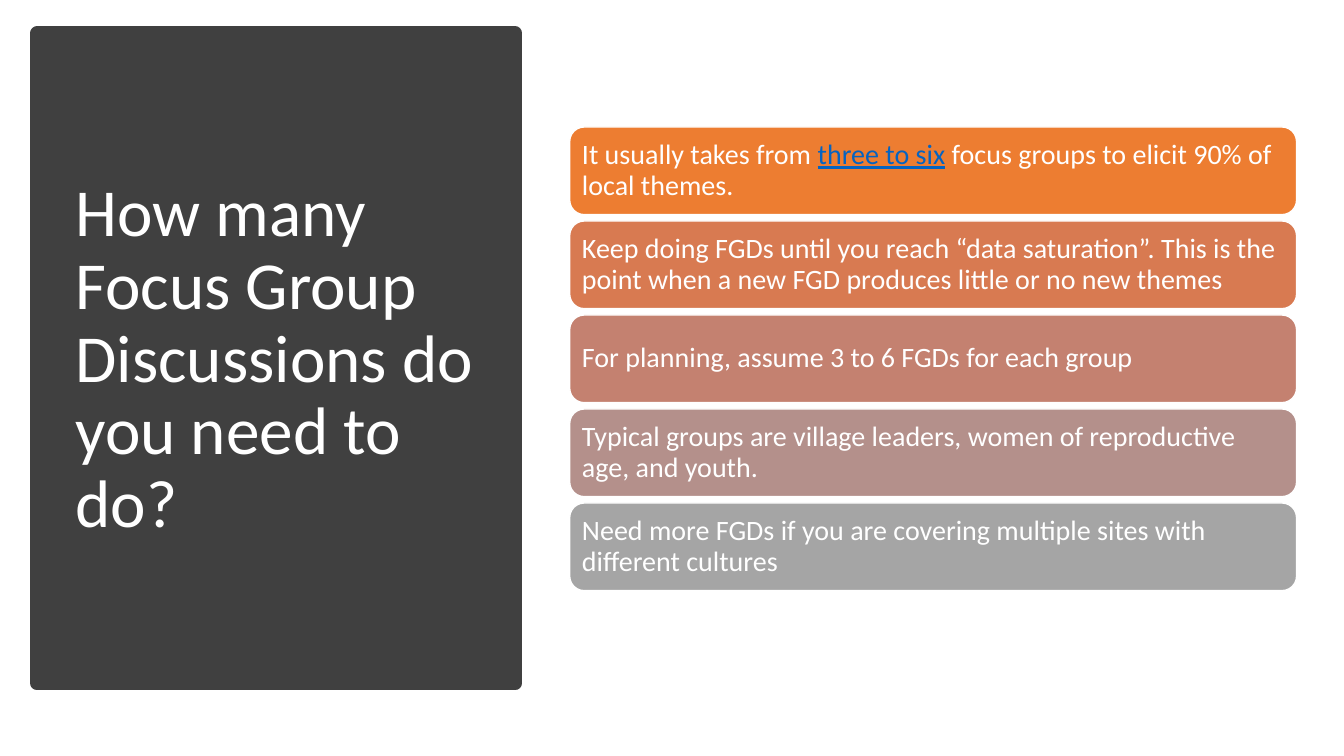
from pptx import Presentation
from pptx.dml.color import RGBColor
from pptx.enum.shapes import MSO_SHAPE as Shape
from pptx.enum.text import MSO_ANCHOR as Anchor, PP_ALIGN as Align
from pptx.util import Inches, Pt

FONT = "Calibri"
WHITE = RGBColor(0xFF, 0xFF, 0xFF)
CHARCOAL = RGBColor(0x40, 0x40, 0x40)
LINK_BLUE = RGBColor(0x05, 0x63, 0xC1)
BAR_COLORS = [
    RGBColor(0xED, 0x7D, 0x31),
    RGBColor(0xD8, 0x7A, 0x51),
    RGBColor(0xC4, 0x81, 0x70),
    RGBColor(0xB4, 0x90, 0x8B),
    RGBColor(0xA5, 0xA5, 0xA5),
]

QUESTION = "How many Focus Group Discussions do you need to do?"
LINKED_WORDS = "three to six"
ANSWERS = [
    "It usually takes from three to six focus groups to elicit 90% of local themes.",
    "Keep doing FGDs until you reach “data saturation”. This is the point "
    "when a new FGD produces little or no new themes",
    "For planning, assume 3 to 6 FGDs for each group",
    "Typical groups are village leaders, women of reproductive age, and youth.",
    "Need more FGDs if you are covering multiple sites with different cultures",
]

# Column of answer bars, in inches
BAR_LEFT, BAR_TOP = 5.65, 1.26
BAR_WIDTH, BAR_HEIGHT, BAR_GAP = 7.21, 0.87, 0.0625
BAR_INSET = 0.08


def add_block(slide, kind, box, fill, line, line_width):
    block = slide.shapes.add_shape(kind, *map(Inches, box))
    block.shadow.inherit = False
    block.fill.solid()
    block.fill.fore_color.rgb = fill
    block.line.color.rgb = line
    block.line.width = Pt(line_width)
    return block


def style_paragraph(paragraph, size):
    paragraph.alignment = Align.LEFT
    paragraph.line_spacing = 0.9
    paragraph.font.name = FONT
    paragraph.font.size = Pt(size)
    paragraph.font.color.rgb = WHITE


def add_question(slide):
    add_block(slide, Shape.RECTANGLE, (0.37, 0.33, 4.74, 6.45), CHARCOAL, CHARCOAL, 10)
    box = slide.shapes.add_textbox(*map(Inches, (0.65, 0.7, 4.16, 5.75)))
    frame = box.text_frame
    frame.word_wrap = True
    frame.vertical_anchor = Anchor.MIDDLE
    frame.text = QUESTION
    style_paragraph(frame.paragraphs[0], 48)


def add_answer(slide, row, answer, color):
    top = BAR_TOP + row * (BAR_HEIGHT + BAR_GAP)
    bar = add_block(slide, Shape.ROUNDED_RECTANGLE,
                    (BAR_LEFT, top, BAR_WIDTH, BAR_HEIGHT), color, WHITE, 1)
    frame = bar.text_frame
    frame.word_wrap = True
    frame.vertical_anchor = Anchor.MIDDLE
    frame.margin_left = frame.margin_right = Inches(BAR_INSET)
    frame.margin_top = frame.margin_bottom = Inches(BAR_INSET)

    paragraph = frame.paragraphs[0]
    style_paragraph(paragraph, 20)
    # Partition gives the words before, in and after the highlighted phrase
    for words in filter(None, answer.partition(LINKED_WORDS)):
        run = paragraph.add_run()
        run.text = words
        if words == LINKED_WORDS:
            run.font.color.rgb = LINK_BLUE
            run.font.underline = True


def main():
    deck = Presentation()
    deck.slide_width, deck.slide_height = Inches(13.33), Inches(7.5)
    slide = deck.slides.add_slide(deck.slide_layouts[6])

    # Question panel on the left
    add_question(slide)

    # Answers on the right, fading from orange to grey
    for row, (answer, color) in enumerate(zip(ANSWERS, BAR_COLORS)):
        add_answer(slide, row, answer, color)

    deck.save("out.pptx")


if __name__ == "__main__":
    main()
